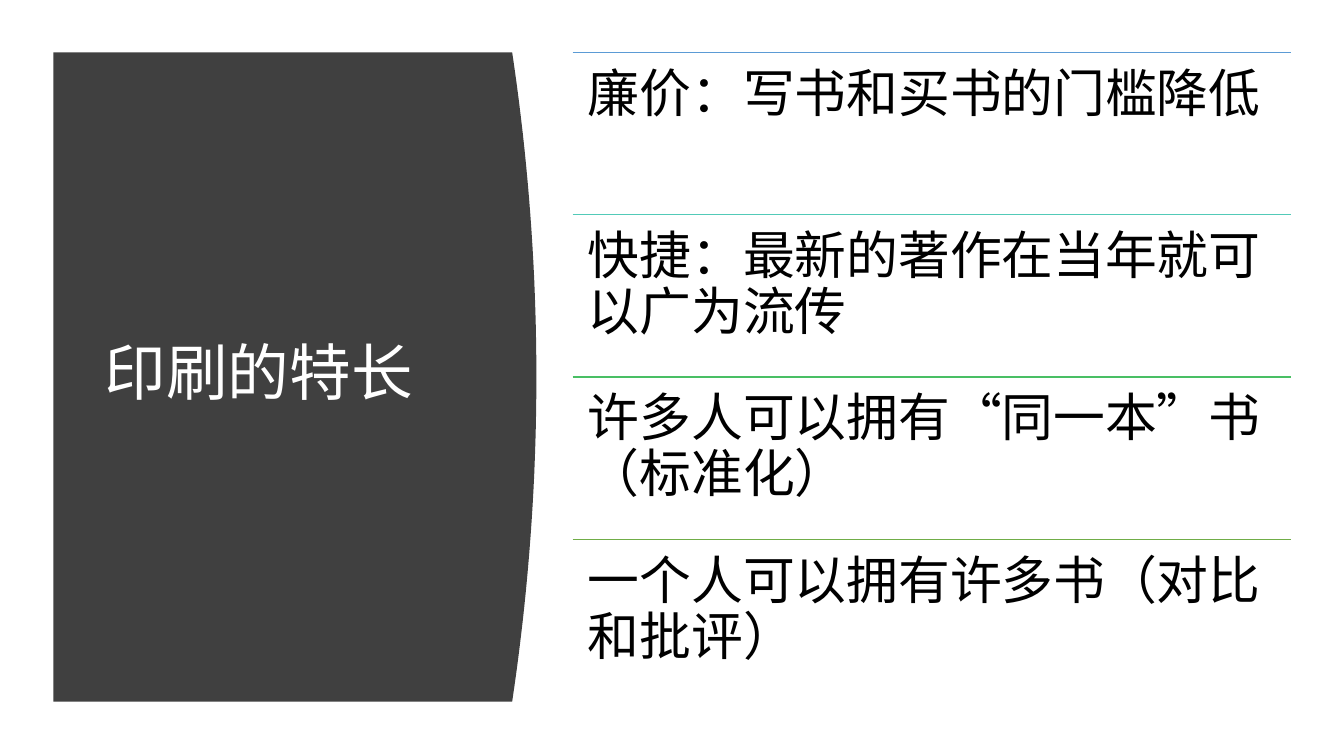
from lxml import etree
from pptx import Presentation
from pptx.dml.color import RGBColor
from pptx.enum.lang import MSO_LANGUAGE_ID
from pptx.enum.shapes import MSO_CONNECTOR
from pptx.enum.text import MSO_ANCHOR
from pptx.oxml.ns import qn
from pptx.util import Inches, Pt

STRAIGHT = MSO_CONNECTOR.STRAIGHT
TOP, MIDDLE = MSO_ANCHOR.TOP, MSO_ANCHOR.MIDDLE
CHINESE = MSO_LANGUAGE_ID.SIMPLIFIED_CHINESE
FONT = "Noto Sans CJK SC"
COLORS = {
    "panel": "404040", "title": "FFFFFF", "text": "000000",
    "blue": "5B9BD5", "teal": "52CAB8", "green": "49BF64", "olive": "70AD47",
}
POINTS = [
    ("blue", "廉价：写书和买书的门槛降低"),
    ("teal", "快捷：最新的著作在当年就可以广为流传"),
    ("green", "许多人可以拥有“同一本”书（标准化）"),
    ("olive", "一个人可以拥有许多书（对比和批评）"),
]


def color(name):
    return RGBColor.from_string(COLORS[name])


def add_text(slide, box, text, size, tint, anchor, pad_x, pad_y):
    frame = slide.shapes.add_textbox(*map(Inches, box)).text_frame
    frame.word_wrap = True
    frame.vertical_anchor = anchor
    frame.margin_left = frame.margin_right = Inches(pad_x)
    frame.margin_top = frame.margin_bottom = Inches(pad_y)
    para = frame.paragraphs[0]
    para.line_spacing = 0.9
    run = para.add_run()
    run.text = text
    font = run.font
    font.name, font.size = FONT, Pt(size)
    font.color.rgb = color(tint)
    font.language_id = CHINESE
    # East Asian typeface
    props = run._r.get_or_add_rPr()
    etree.SubElement(props, qn("a:ea")).set("typeface", FONT)


def add_panel(slide, box, bulge=0.24, steps=40):
    left, top, width, height = box
    edge = left + width - bulge
    # Bowed right side, top to bottom
    curve = []
    for i in range(steps + 1):
        t = i / steps
        curve.append((edge + 4 * bulge * t * (1 - t), top + height * t))
    build = slide.shapes.build_freeform(
        Inches(left), Inches(top), scale=1.0)
    dots = curve + [(left, top + height)]
    build.add_line_segments([(Inches(x), Inches(y)) for x, y in dots])
    panel = build.convert_to_shape()
    panel.shadow.inherit = False
    panel.fill.solid()
    panel.fill.fore_color.rgb = color("panel")
    panel.line.fill.background()
    # Title
    add_text(slide, (left + 0.41, top + 0.59, 3.74, 5.24),
             "印刷的特长", 44, "title", MIDDLE, 0.1, 0.05)


def add_points(slide, box):
    left, top, width, height = box
    row = height / len(POINTS)
    for i, (tint, text) in enumerate(POINTS):
        y = top + i * row
        # Rule above the point
        rule = slide.shapes.add_connector(
            STRAIGHT, *map(Inches, (left, y, left + width, y)))
        rule.line.color.rgb = color(tint)
        rule.line.width = Pt(1)
        etree.SubElement(rule._element.spPr, qn("a:effectLst"))
        add_text(slide, (left, y, width, row), text, 37, "text",
                 TOP, 0.15, 0.15)


def main():
    deck = Presentation()
    deck.slide_width, deck.slide_height = Inches(13.33), Inches(7.5)
    slide = deck.slides.add_slide(deck.slide_layouts[6])
    add_panel(slide, (0.53, 0.52, 4.79, 6.44))
    add_points(slide, (5.68, 0.52, 7.12, 6.44))
    deck.save("out.pptx")


if __name__ == "__main__":
    main()
